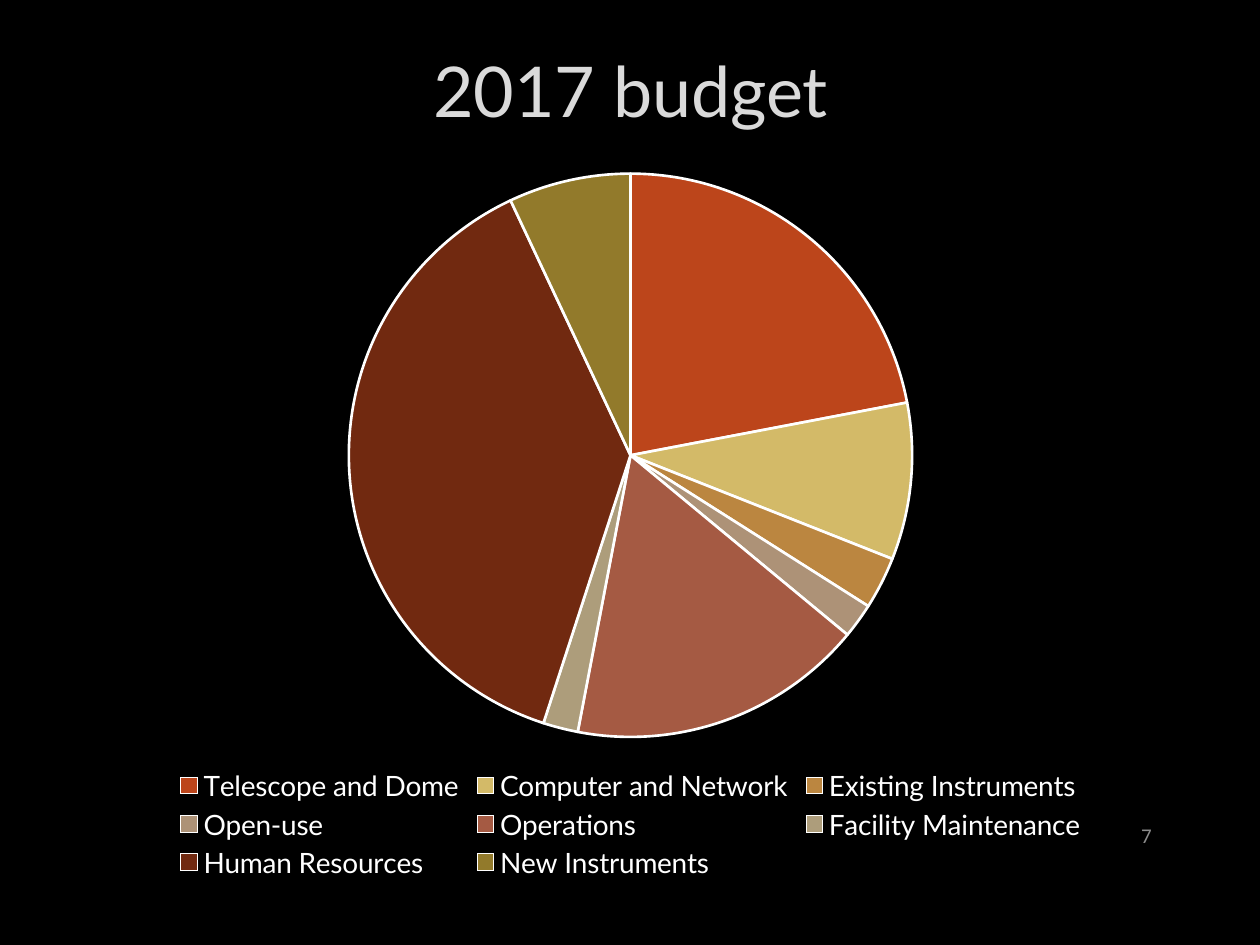
from lxml.etree import fromstring
from pptx import Presentation
from pptx.chart.data import CategoryChartData as Data
from pptx.dml.color import RGBColor as RGB
from pptx.enum.chart import XL_CHART_TYPE as Kind, XL_LEGEND_POSITION as Side
from pptx.enum.text import MSO_ANCHOR as Anchor, PP_ALIGN as Align
from pptx.util import Pt

# Content
TITLE = "2017 budget"
PAGE = "7"
BUDGET = [  # item, share, slice colour
    ("Telescope and Dome", 22, "BC451B"),
    ("Computer and Network", 9, "D3BA68"),
    ("Existing Instruments", 3, "BB8640"),
    ("Open-use", 2, "AD9277"),
    ("Operations", 17, "A55A43"),
    ("Facility Maintenance", 2, "AD9D7B"),
    ("Human Resources", 38, "712910"),
    ("New Instruments", 7, "927A2B"),
]


class Theme:
    back, line = "000000", "FFFFFF"
    title = ("Lato", 40, "DADADA")
    page = ("Calibri", 12, "8C8C8C")
    chart = ("Lato", 10, "FFFFFF")
    legend = ("Lato", 16, "FFFFFF")


# Layout in points
WIDE, HIGH = 720, 540
LEFT, TOP, SPLIT, BASE = 54, 13, 89.3, 505.4
SPAN = WIDE - 2 * LEFT + 0.6

OUTLINE = (
    '<a:ln xmlns:a="http://schemas.openxmlformats.org/drawingml/2006/main" w="9525">'
    '<a:solidFill><a:srgbClr val="404040"><a:alpha val="10000"/></a:srgbClr>'
    "</a:solidFill></a:ln>"
)


def style(font, look):
    font.name, size, color = look
    font.size = Pt(size)
    font.bold = False
    font.color.rgb = RGB.from_string(color)


def write(shape, text, look, align):
    frame = shape.text_frame
    frame.text = text
    frame.word_wrap = True
    frame.vertical_anchor = Anchor.MIDDLE
    para = frame.paragraphs[0]
    para.alignment = align
    style(para.runs[0].font, look)
    return para.runs[0]


def box(*sides):
    return [Pt(side) for side in sides]


deck = Presentation()
deck.slide_width, deck.slide_height = box(WIDE, HIGH)
slide = deck.slides.add_slide(deck.slide_layouts[5])
fill = slide.background.fill
fill.solid()
fill.fore_color.rgb = RGB.from_string(Theme.back)

# Title
title = slide.shapes.title
title.left, title.top, title.width, title.height = box(LEFT, TOP, SPAN, SPLIT - TOP)
run = write(title, TITLE, Theme.title, Align.CENTER)
run.font._element.insert(0, fromstring(OUTLINE))

# Page number
page = slide.shapes.add_textbox(*box(620.6, 463, 44.6, 28.8))
write(page, PAGE, Theme.page, Align.RIGHT)

# Budget pie
data = Data()
data.categories = [item for item, _, _ in BUDGET]
data.add_series("Series 1", [share for _, share, _ in BUDGET])
area = box(LEFT, SPLIT, SPAN, BASE - SPLIT)
chart = slide.shapes.add_chart(Kind.PIE, *area, data).chart
chart.has_title = False
style(chart.font, Theme.chart)
plot = chart.plots[0]
plot.vary_by_categories = True
for spot, (_, _, color) in enumerate(BUDGET):
    form = plot.series[0].points[spot].format
    form.fill.solid()
    form.fill.fore_color.rgb = RGB.from_string(color)
    form.line.color.rgb = RGB.from_string(Theme.line)
    form.line.width = Pt(1.5)

# Legend
chart.has_legend = True
chart.legend.position = Side.BOTTOM
chart.legend.include_in_layout = False
style(chart.legend.font, Theme.legend)

deck.save("out.pptx")
